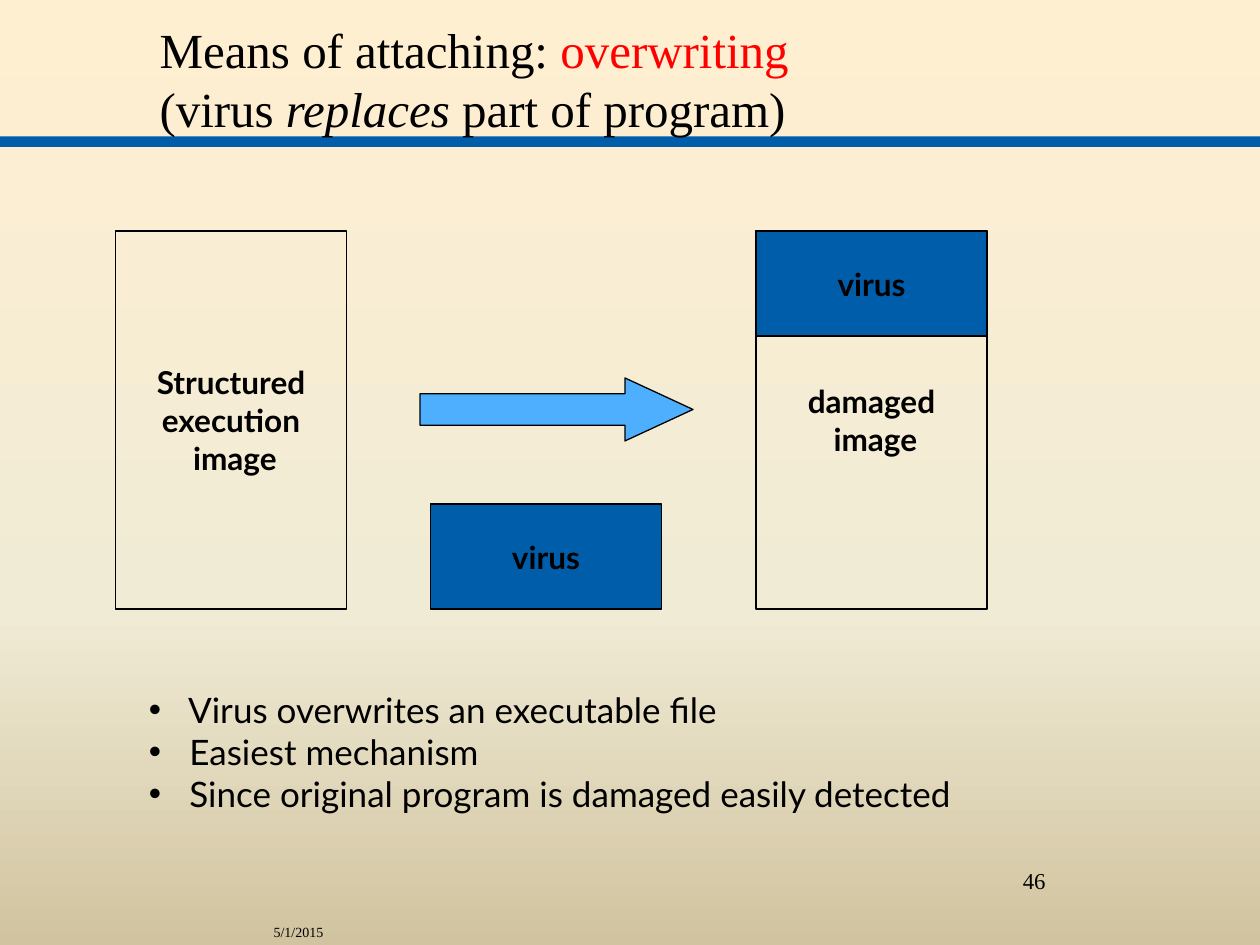
from dataclasses import dataclass
from lxml import etree
from pptx import Presentation, util as u
from pptx.dml.color import RGBColor
from pptx.enum import shapes, text
from pptx.oxml.ns import qn

CELL = u.Inches(1 / 12)
COLS, ROWS = 120, 90
MID = text.PP_ALIGN.CENTER


@dataclass(frozen=True)
class Theme:
    serif: str = "Times New Roman"
    sans: str = "Lato"
    ink: str = "000000"
    red: str = "FF0000"
    blue: str = "005DAA"
    sky: str = "4FAFFF"
    back: tuple = ((0, "FFEFD1"), (65, "F0EBD5"), (100, "D1C39F"))
    head: int = 28
    body: int = 20
    label: int = 18
    page: int = 13
    date: int = 8
    line: float = 0.75


T = Theme()


def grid(box):
    return [round(n * CELL) for n in box]


def style(run, size, face, tint=T.ink, bold=False, slant=False):
    font = run.font
    font.size, font.name = u.Pt(size), face
    font.bold, font.italic = bold, slant
    font.color.rgb = RGBColor.from_string(tint)


def write(frame, words, size, face, align=None, bold=False):
    frame.text = words
    for para in frame.paragraphs:
        para.alignment = align
        for run in para.runs:
            style(run, size, face, bold=bold)


def block(slide, box, fill=None, words="", kind=shapes.MSO_SHAPE.RECTANGLE,
          edge=True):
    item = slide.shapes.add_shape(kind, *grid(box))
    item.shadow.inherit = False
    if fill:
        item.fill.solid()
        item.fill.fore_color.rgb = RGBColor.from_string(fill)
    else:
        item.fill.background()
    if edge:
        item.line.color.rgb = RGBColor.from_string(T.ink)
        item.line.width = u.Pt(T.line)
    else:
        item.line.fill.background()
    if words:
        frame = item.text_frame
        frame.word_wrap = False
        frame.vertical_anchor = text.MSO_ANCHOR.MIDDLE
        write(frame, words, T.label, T.sans, MID, True)
    return item


def note(slide, box, words, size, face, align=None):
    frame = slide.shapes.add_textbox(*grid(box)).text_frame
    frame.word_wrap = True
    write(frame, words, size, face, align)
    return frame


def backdrop(slide):
    fill = slide.background.fill
    fill.gradient()
    fill.gradient_angle = 270
    stops = slide.element.find(".//" + qn("a:gsLst"))
    for old in list(stops):
        stops.remove(old)
    for share, tint in T.back:
        stop = etree.SubElement(stops, qn("a:gs"), pos=str(share * 1000))
        etree.SubElement(stop, qn("a:srgbClr"), val=tint)


def heading(slide, box):
    title = slide.shapes.title
    title.left, title.top, title.width, title.height = grid(box)
    frame = title.text_frame
    frame.auto_size = text.MSO_AUTO_SIZE.NONE
    frame.word_wrap = True
    frame.vertical_anchor = text.MSO_ANCHOR.MIDDLE
    para = frame.paragraphs[0]
    para.alignment = text.PP_ALIGN.LEFT
    lines = (
        (("Means of attaching: ", T.ink, False),
         ("overwriting", T.red, False)),
        (("(virus ", T.ink, False), ("replaces", T.ink, True),
         (" part of program)", T.ink, False)),
    )
    for row, line in enumerate(lines):
        if row:
            para.add_line_break()
        for words, tint, slant in line:
            run = para.add_run()
            run.text = words
            style(run, T.head, T.serif, tint, slant=slant)


def diagram(slide, box):
    """Shows a program image before and after the virus overwrites its top."""
    left, top, width, high = box
    wide, cap = 22, 10
    after = left + width - wide
    block(slide, (left + 30, top + high - cap, wide, cap), T.blue, "virus")
    block(slide, (left, top, wide, high),
          words="Structured\vexecution\v image")
    block(slide, (after, top, wide, high), words="damaged\n image")
    block(slide, (after, top, wide, cap), T.blue, "virus")
    arrow = block(slide, (left + 29, top + 14, 26, 6), T.sky,
                  kind=shapes.MSO_SHAPE.RIGHT_ARROW)
    arrow.adjustments[0], arrow.adjustments[1] = 0.5, 1.08


def points(slide, box):
    words = (" Virus overwrites an executable file\n"
             " Easiest mechanism\n"
             " Since original program is damaged easily detected")
    frame = note(slide, box, words, T.body, T.sans)
    inset = u.Inches(0.25)
    for para in frame.paragraphs:
        props = para._p.get_or_add_pPr()
        props.set("marL", str(inset))
        props.set("indent", str(-inset))
        etree.SubElement(props, qn("a:buFont"), typeface="Arial")
        etree.SubElement(props, qn("a:buChar"), char="•")


def footer(slide, box):
    left, top, width, high = box
    note(slide, (left, top + 5.4, 24, 2), "5/1/2015", T.date, T.serif,
         text.PP_ALIGN.RIGHT)
    note(slide, (left + width - 25, top, 25, 6), "46", T.page, T.serif, MID)


def main():
    deck = Presentation()
    deck.slide_width, deck.slide_height = COLS * CELL, ROWS * CELL
    slide = deck.slides.add_slide(deck.slide_layouts.get_by_name("Title Only"))
    backdrop(slide)
    block(slide, (0, 13, COLS, 1), T.blue, edge=False)
    footer(slide, (8, 82, 103, 8))
    heading(slide, (14, 0, 97, 15))
    diagram(slide, (11, 22, 83, 36))
    points(slide, (13, 65, 96, 21.4))
    # The title reads above the rule, so it is drawn last.
    tree = slide.shapes.title.element.getparent()
    tree.append(slide.shapes.title.element)
    deck.save("out.pptx")


if __name__ == "__main__":
    main()
